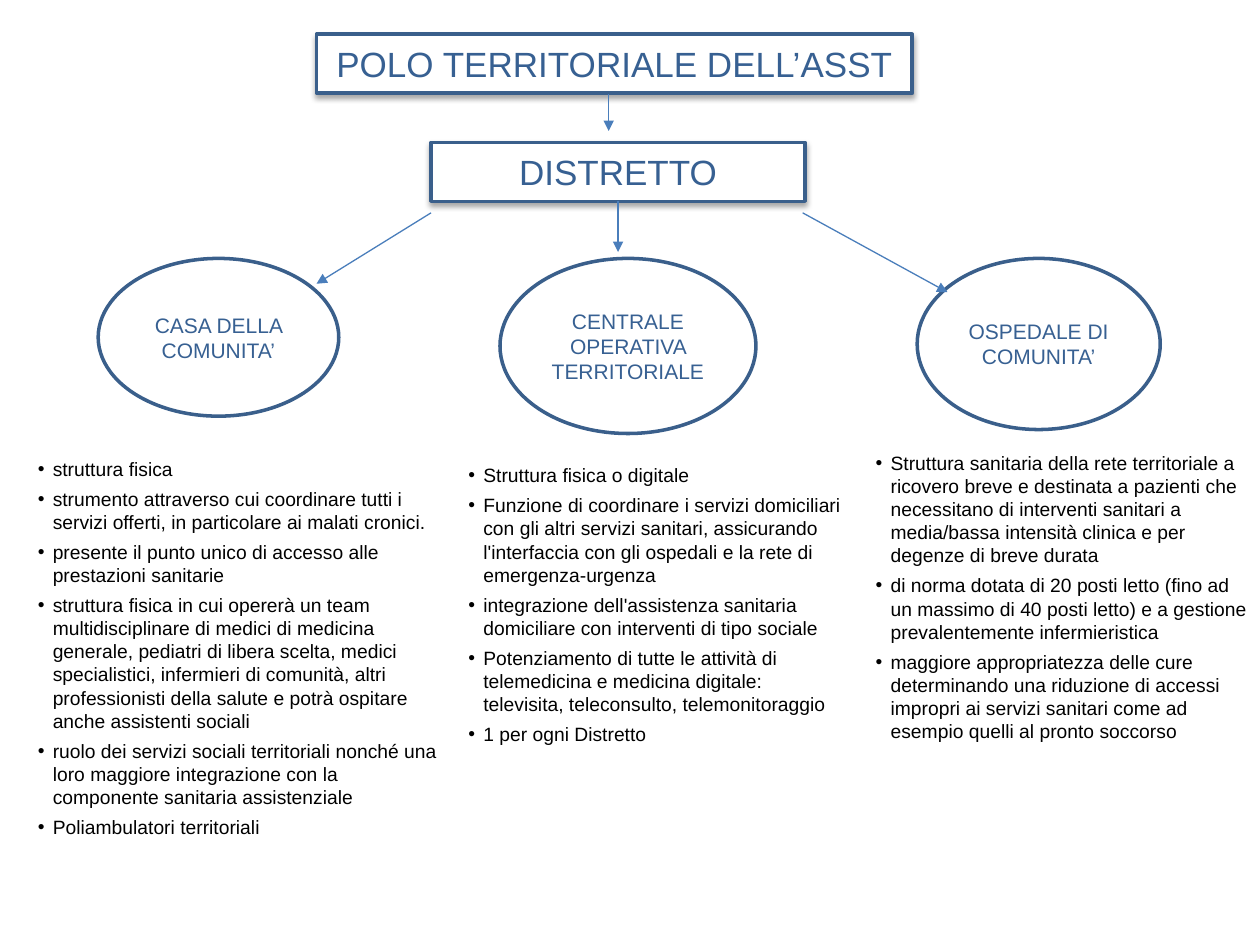
"""Build the slide on the territorial pole, its district and the three community services."""
from lxml.etree import SubElement
from pptx import Presentation
from pptx.dml.color import RGBColor
from pptx.enum.shapes import MSO_CONNECTOR, MSO_SHAPE
from pptx.enum.text import MSO_ANCHOR, MSO_AUTO_SIZE, PP_ALIGN
from pptx.oxml.ns import qn
from pptx.util import Cm, Pt

COLOURS = {"paper": "FFFFFF", "border": "3A5F8B", "label": "376092",
           "arrow": "4A7EBB", "text": "000000"}


def style_node(shape, label, size, shadowed):
    shape.fill.solid()
    shape.fill.fore_color.rgb = RGBColor.from_string(COLOURS["paper"])
    shape.line.color.rgb = RGBColor.from_string(COLOURS["border"])
    shape.line.width = Pt(2)
    shape.shadow.inherit = False
    if shadowed:
        effects = shape._element.spPr.find(qn("a:effectLst"))
        shadow = SubElement(effects, qn("a:outerShdw"), blurRad=str(Pt(3.1)),
                            dist=str(Pt(1.8)), dir="5400000", rotWithShape="0")
        tint = SubElement(shadow, qn("a:srgbClr"), val=COLOURS["text"])
        SubElement(tint, qn("a:alpha"), val="35000")
    frame = shape.text_frame
    frame.word_wrap = True
    frame.auto_size = MSO_AUTO_SIZE.NONE
    frame.vertical_anchor = MSO_ANCHOR.MIDDLE
    para = frame.paragraphs[0]
    para.alignment = PP_ALIGN.CENTER
    span = para.add_run()
    span.text = label
    span.font.name = "Arial"
    span.font.size = Pt(size)
    span.font.color.rgb = RGBColor.from_string(COLOURS["label"])


def add_arrow(page, start_x, start_y, end_x, end_y):
    arrow = page.shapes.add_connector(MSO_CONNECTOR.STRAIGHT, Cm(start_x), Cm(start_y),
                                      Cm(end_x), Cm(end_y))
    arrow.line.color.rgb = RGBColor.from_string(COLOURS["arrow"])
    arrow.line.width = Pt(0.75)
    SubElement(arrow.line._get_or_add_ln(), qn("a:tailEnd"), type="triangle")
    SubElement(arrow._element.spPr, qn("a:effectLst"))
    return arrow


deck = Presentation()
deck.slide_width, deck.slide_height = Cm(25.4), Cm(19.05)
page = deck.slides.add_slide(deck.slide_layouts.get_by_name("Comparison"))

title = page.shapes.title
title.left, title.top, title.width, title.height = Cm(6.38), Cm(0.69), Cm(12.01), Cm(1.19)
style_node(title, "POLO TERRITORIALE DELL’ASST", 20, True)

district = page.shapes.add_shape(MSO_SHAPE.RECTANGLE, Cm(8.69), Cm(2.87), Cm(7.54), Cm(1.19))
style_node(district, "DISTRETTO", 20, True)

services = [
    ("CASA DELLA COMUNITA’", 1.98, 4.85, 3.18),
    ("CENTRALE OPERATIVA TERRITORIALE", 10.08, 5.16, 3.53),
    ("OSPEDALE DI COMUNITA’", 18.49, 4.9, 3.45),
]
for label, left, width, height in services:
    oval = page.shapes.add_shape(MSO_SHAPE.OVAL, Cm(left), Cm(5.21), Cm(width), Cm(height))
    style_node(oval, label, 12, False)

add_arrow(page, 12.27, 1.9, 12.27, 2.64)
add_arrow(page, 8.69, 4.29, 6.38, 5.72)
add_arrow(page, 16.18, 4.29, 19.1, 5.89)
add_arrow(page, 12.46, 4.06, 12.46, 5.08).begin_connect(district, 2)

lists = [
    (1, 0.51, 9.09, 8.56, [
        "struttura fisica",
        "strumento attraverso cui coordinare tutti i servizi offerti, in particolare ai malati cronici.",
        "presente il punto unico di accesso alle prestazioni sanitarie",
        "struttura fisica in cui opererà un team multidisciplinare di medici di medicina generale, "
        "pediatri di libera scelta, medici specialistici, infermieri di comunità, altri "
        "professionisti della salute e potrà ospitare anche assistenti sociali",
        "ruolo dei servizi sociali territoriali nonché una loro maggiore integrazione con la "
        "componente sanitaria assistenziale",
        "Poliambulatori territoriali",
    ]),
    (2, 9.19, 9.22, 8.03, [
        "Struttura fisica o digitale",
        "Funzione di coordinare i servizi domiciliari con gli altri servizi sanitari, assicurando "
        "l'interfaccia con gli ospedali e la rete di emergenza-urgenza",
        "integrazione dell'assistenza sanitaria domiciliare con interventi di tipo sociale",
        "Potenziamento di tutte le attività di telemedicina e medicina digitale: televisita, "
        "teleconsulto, telemonitoraggio",
        "1 per ogni Distretto",
    ]),
    (4, 17.4, 8.97, 8.03, [
        "Struttura sanitaria della rete territoriale a ricovero breve e destinata a pazienti che "
        "necessitano di interventi sanitari a media/bassa intensità clinica e per degenze di "
        "breve durata",
        "di norma dotata di 20 posti letto (fino ad un massimo di 40 posti letto) e a gestione "
        "prevalentemente infermieristica",
        "maggiore appropriatezza delle cure determinando una riduzione di accessi impropri ai "
        "servizi sanitari come ad esempio quelli al pronto soccorso",
    ]),
]
bodies = {body.placeholder_format.idx: body for body in page.placeholders}
for index, left, top, width, items in lists:
    body = bodies[index]
    body.left, body.top, body.width, body.height = Cm(left), Cm(top), Cm(width), Cm(7.44)
    frame = body.text_frame
    frame.word_wrap = True
    frame.auto_size = MSO_AUTO_SIZE.NONE
    frame.vertical_anchor = MSO_ANCHOR.TOP
    for number, item in enumerate(items):
        para = frame.add_paragraph() if number else frame.paragraphs[0]
        properties = para._p.get_or_add_pPr()
        properties.set("marL", str(Cm(0.3)))
        properties.set("indent", str(Cm(-0.3)))
        bullet_colour = SubElement(properties, qn("a:buClr"))
        SubElement(bullet_colour, qn("a:srgbClr"), val=COLOURS["text"])
        SubElement(properties, qn("a:buFont"), typeface="Arial")
        SubElement(properties, qn("a:buChar"), char="•")
        para.alignment = PP_ALIGN.LEFT
        para.space_before = Pt(3.9 if number else 0)
        span = para.add_run()
        span.text = item
        span.font.name = "Arial"
        span.font.size = Pt(11)
        span.font.bold = False
        span.font.color.rgb = RGBColor.from_string(COLOURS["text"])

spare = bodies[3]._element
spare.getparent().remove(spare)

deck.save("out.pptx")
